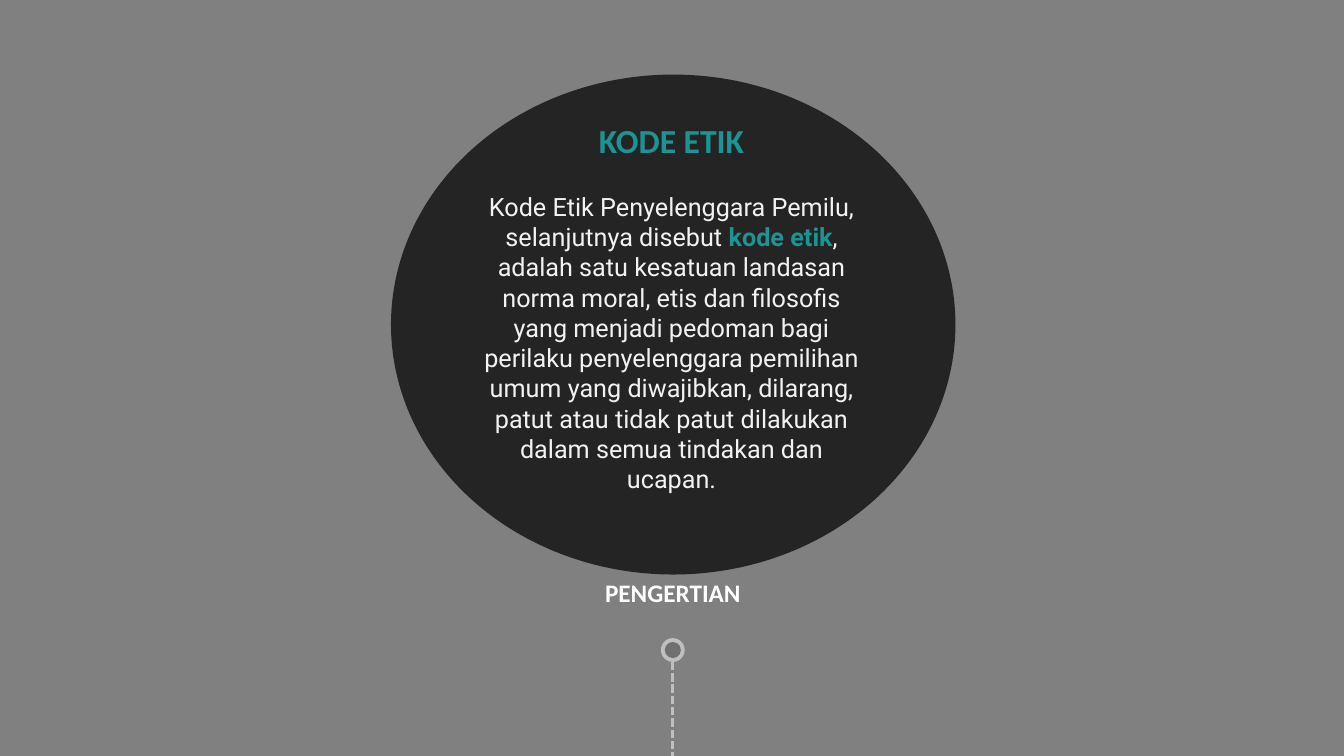
import pptx
import pptx.util
import pptx.dml.color
import pptx.enum.dml
import pptx.enum.shapes
import pptx.enum.text
import pptx.oxml.ns
import lxml.etree
from dataclasses import dataclass

Pt = pptx.util.Pt
qn = pptx.oxml.ns.qn


@dataclass(frozen=True)
class Theme:
    background: str = "808080"
    disc: str = "0D0D0D"
    accent: str = "1C9494"
    body: str = "F2F2F2"
    label: str = "FFFFFF"
    marker: str = "BFBFBF"
    marker_core: str = "707071"
    heading_font: str = "Calibri"
    body_font: str = "Roboto"
    title_size: int = 24
    text_size: int = 18


@dataclass(frozen=True)
class Box:
    left: float
    top: float
    width: float
    height: float

    def lengths(self):
        return Pt(self.left), Pt(self.top), Pt(self.width), Pt(self.height)

    def inset(self, left, top, right, bottom):
        return Box(self.left + left, self.top + top,
                   self.width - left - right, self.height - top - bottom)


THEME = Theme()
PAGE_WIDTH, PAGE_HEIGHT = 960, 540
DEFINITION = [
    ("Kode Etik Penyelenggara Pemilu, selanjutnya disebut ", False),
    ("kode etik", True),
    (", adalah satu kesatuan landasan norma moral, etis dan filosofis yang "
     "menjadi pedoman bagi perilaku penyelenggara pemilihan umum yang "
     "diwajibkan, dilarang, patut atau tidak patut dilakukan dalam semua "
     "tindakan dan ucapan.", False),
]


def rgb(color):
    return pptx.dml.color.RGBColor.from_string(color)


def add_ellipse(page, box, color, opacity=100):
    ellipse = page.shapes.add_shape(
        pptx.enum.shapes.MSO_SHAPE.OVAL, *box.lengths())
    ellipse.shadow.inherit = False
    ellipse.line.fill.background()
    ellipse.fill.solid()
    ellipse.fill.fore_color.rgb = rgb(color)
    if opacity < 100:
        fill_color = ellipse.fill._xPr.find(qn("a:solidFill"))[0]
        alpha = lxml.etree.SubElement(fill_color, qn("a:alpha"))
        alpha.set("val", str(opacity * 1000))


def add_text_frame(page, box, margins):
    frame = page.shapes.add_textbox(*box.lengths()).text_frame
    frame.word_wrap = True
    (frame.margin_left, frame.margin_top,
     frame.margin_right, frame.margin_bottom) = map(Pt, margins)
    return frame


def add_span(para, text, font, size, color, bold):
    para.alignment = pptx.enum.text.PP_ALIGN.CENTER
    span = para.add_run()
    span.text = text
    span.font.name = font
    span.font.size = Pt(size)
    span.font.color.rgb = rgb(color)
    span.font.bold = bold


def add_definition(page, box):
    # Dark translucent disc
    add_ellipse(page, box, THEME.disc, opacity=80)

    # Heading and definition
    frame = add_text_frame(page, box.inset(52, 29, 50, 52), (7.2, 3.6, 11.5, 3))
    heading = frame.paragraphs[0]
    add_span(heading, "KODE ETIK", THEME.heading_font, THEME.title_size,
             THEME.accent, True)
    heading.space_after = Pt(22)
    para = frame.add_paragraph()
    for text, emphasis in DEFINITION:
        add_span(para, text, THEME.body_font, THEME.text_size,
                 THEME.accent if emphasis else THEME.body, emphasis)


def add_timeline_marker(page, box):
    center = box.left + box.width / 2
    ring = Box(center - 8.5, box.top + 46.8, 17, 17)

    # Dashed stem running to the foot of the box
    stem = page.shapes.add_connector(
        pptx.enum.shapes.MSO_CONNECTOR.STRAIGHT, Pt(center),
        Pt(ring.top + ring.height), Pt(center), Pt(box.top + box.height))
    stem.line.color.rgb = rgb(THEME.marker)
    stem.line.width = Pt(2)
    stem.line.dash_style = pptx.enum.dml.MSO_LINE.SQUARE_DOT
    lxml.etree.SubElement(stem._element.spPr, qn("a:effectLst"))

    # Ring
    add_ellipse(page, ring, THEME.marker)
    add_ellipse(page, ring.inset(2.75, 2.75, 2.75, 2.75), THEME.marker_core)

    # Label
    label = Box(box.left, box.top, box.width, 29)
    frame = add_text_frame(page, label, (7.2, 3.6, 7.2, 3.6))
    add_span(frame.paragraphs[0], "PENGERTIAN", THEME.heading_font,
             THEME.text_size, THEME.label, True)


def main():
    deck = pptx.Presentation()
    deck.slide_width, deck.slide_height = Pt(PAGE_WIDTH), Pt(PAGE_HEIGHT)
    page = deck.slides.add_slide(deck.slide_layouts[6])
    page.background.fill.solid()
    page.background.fill.fore_color.rgb = rgb(THEME.background)

    add_definition(page, Box(279.3, 53.3, 403.2, 357.1))
    add_timeline_marker(page, Box(417.2, 409, 126.8, PAGE_HEIGHT - 409))
    deck.save("out.pptx")


if __name__ == "__main__":
    main()
